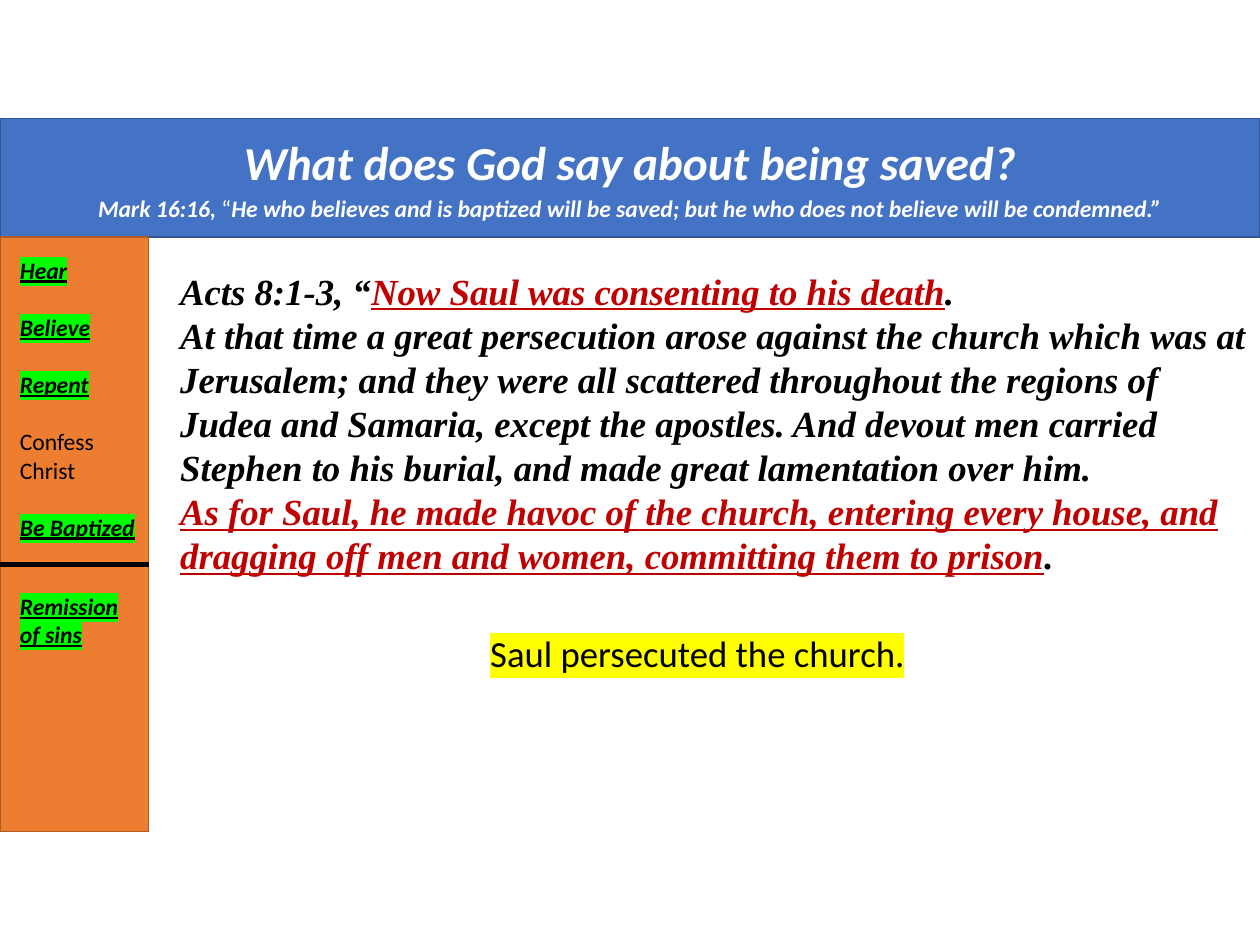
from lxml import etree
from pptx import Presentation
from pptx.dml.color import RGBColor
from pptx.enum.shapes import MSO_CONNECTOR, MSO_SHAPE
from pptx.enum.text import MSO_ANCHOR, MSO_AUTO_SIZE, PP_ALIGN
from pptx.oxml.ns import qn
from pptx.util import Inches, Pt

LEFT, CENTER = PP_ALIGN.LEFT, PP_ALIGN.CENTER
TOP, MIDDLE = MSO_ANCHOR.TOP, MSO_ANCHOR.MIDDLE
BLACK, WHITE, RED = "000000", "FFFFFF", "C00000"
GREEN, YELLOW = "00FF00", "FFFF00"
BLUE, BLUE_EDGE = "4472C4", "325491"
ORANGE, ORANGE_EDGE = "ED7D31", "AF5C24"

# Run styles
HEADING = dict(name="Calibri", size=27, color=WHITE, bold=True, italic=True)
VERSE = dict(HEADING, size=13.5)
QUOTE = dict(VERSE, bold=False, italic=False)
STEP = dict(name="Calibri", size=13.5, color=BLACK, bold=False, italic=False)
DONE = dict(STEP, bold=True, italic=True, underline=True, highlight=GREEN)
SCRIPTURE = dict(name="Times New Roman", size=21, color=BLACK, bold=True, italic=True)
STRESSED = dict(SCRIPTURE, color=RED, underline=True)
SUMMARY = dict(name="Calibri", size=21, color=BLACK, highlight=YELLOW)

# Paragraphs are lists of (text, style)
BANNER = [
    [("What does God say about being saved?", HEADING)],
    [("Mark 16:16, ", VERSE), ("“", QUOTE),
     ("He who believes and is baptized will be saved; but he who does not "
      "believe will be condemned.”", VERSE)],
]
PASSAGE = [
    [("Acts 8:1-3, “", SCRIPTURE),
     ("Now Saul was consenting to his death", STRESSED), (".", SCRIPTURE)],
    [("At that time a great persecution arose against the church which was at "
      "Jerusalem; and they were all scattered throughout the regions of Judea "
      "and Samaria, except the apostles. And devout men carried Stephen to his "
      "burial, and made great lamentation over him.", SCRIPTURE)],
    [("As for Saul, he made havoc of the church, entering every house, and "
      "dragging off men and women, committing them to prison", STRESSED),
     (".", SCRIPTURE)],
]
STEPS = [
    [("Hear", DONE)], [("Believe", DONE)], [("Repent", DONE)],
    [("Confess Christ", STEP)], [("Be Baptized", DONE)],
]
RESULT = [[("Remission of sins", DONE)]]
CONCLUSION = [[("Saul persecuted the church.", SUMMARY)]]

PAGE_W, PAGE_H = 10, 7.5
BAND_TOP, BAND_H = 0.94, 0.94
PANEL_TOP, PANEL_W, PANEL_H = BAND_TOP + BAND_H, 1.18, 4.72
STEP_LEFT, STEP_W = 0.06, 1.12
TEXT_LEFT = 1.33
RULE_Y = 4.48


def rgb(value):
    return RGBColor.from_string(value)


def place(shape, left, top, width, height):
    shape.left, shape.top = Inches(left), Inches(top)
    shape.width, shape.height = Inches(width), Inches(height)


def paint(shape, fill, edge):
    shape.fill.solid()
    shape.fill.fore_color.rgb = rgb(fill)
    shape.line.color.rgb = rgb(edge)
    shape.line.width = Pt(1)


def add_span(para, text, style):
    span = para.add_run()
    span.text = text
    for key, value in style.items():
        if key == "size":
            span.font.size = Pt(value)
        elif key == "color":
            span.font.color.rgb = rgb(value)
        elif key == "highlight":
            mark = etree.Element(qn("a:highlight"))
            etree.SubElement(mark, qn("a:srgbClr"), val=value)
            span.font._element.find(qn("a:solidFill")).addnext(mark)
        else:
            setattr(span.font, key, value)


def write(shape, paragraphs, align=LEFT, anchor=TOP, gap=0):
    """Fill the shape with styled paragraphs, gap points apart."""
    frame = shape.text_frame
    frame.word_wrap = True
    frame.auto_size = MSO_AUTO_SIZE.NONE
    frame.vertical_anchor = anchor
    for index, spans in enumerate(paragraphs):
        para = frame.add_paragraph() if index else frame.paragraphs[0]
        para.alignment = align
        para.space_before = Pt(gap if index else 0)
        for text, style in spans:
            add_span(para, text, style)


def remove_bullets(shape):
    for para in shape.text_frame.paragraphs:
        props = para._p.get_or_add_pPr()
        props.set("marL", "0")
        props.set("indent", "0")
        etree.SubElement(props, qn("a:buNone"))


def add_text(page, at, paragraphs, **layout):
    box = page.shapes.add_textbox(*map(Inches, at))
    write(box, paragraphs, **layout)


def main():
    deck = Presentation()
    deck.slide_width, deck.slide_height = Inches(PAGE_W), Inches(PAGE_H)
    page = deck.slides.add_slide(deck.slide_layouts[1])

    banner, passage = page.shapes.title, page.placeholders[1]
    place(banner, 0, BAND_TOP, PAGE_W, BAND_H)
    paint(banner, BLUE, BLUE_EDGE)
    write(banner, BANNER, align=CENTER, anchor=MIDDLE, gap=2.7)

    place(passage, TEXT_LEFT, 2.08, PAGE_W - TEXT_LEFT, 2.8)
    write(passage, PASSAGE)
    remove_bullets(passage)

    panel = page.shapes.add_shape(
        MSO_SHAPE.RECTANGLE, *map(Inches, (0, PANEL_TOP, PANEL_W, PANEL_H)))
    panel.shadow.inherit = False
    paint(panel, ORANGE, ORANGE_EDGE)

    add_text(page, (STEP_LEFT, 1.98, STEP_W, 2.37), STEPS, gap=16.5)
    add_text(page, (TEXT_LEFT, 4.96, 8.41, 0.45), CONCLUSION, align=CENTER)
    add_text(page, (STEP_LEFT, 4.65, STEP_W, 0.56), RESULT)

    rule = page.shapes.add_connector(
        MSO_CONNECTOR.STRAIGHT, *map(Inches, (0, RULE_Y, PANEL_W, RULE_Y)))
    rule.line.color.rgb = rgb(BLACK)
    rule.line.width = Pt(3)
    etree.SubElement(rule._element.spPr, qn("a:effectLst"))

    deck.save("out.pptx")


if __name__ == "__main__":
    main()
